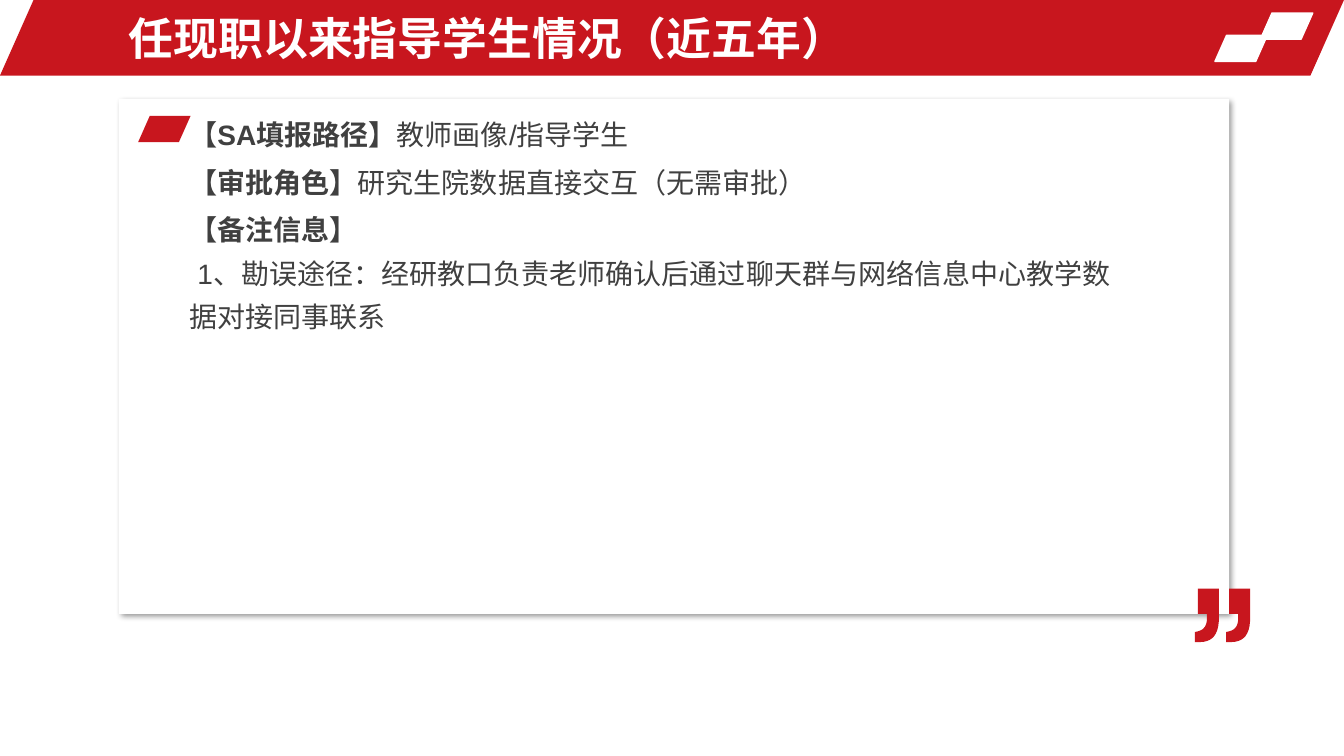
from dataclasses import dataclass

from lxml import etree
from pptx import Presentation
from pptx.dml.color import RGBColor
from pptx.enum.shapes import MSO_SHAPE
from pptx.enum.text import MSO_ANCHOR, MSO_AUTO_SIZE
from pptx.oxml.ns import qn
from pptx.shapes.autoshape import Shape
from pptx.slide import Slide
from pptx.text.text import TextFrame
from pptx.util import Inches, Pt

RED, WHITE, DARK = "C8161E", "FFFFFF", "404040"
FONT = "Arial"
SLANT = 0.444
UNITS_PER_INCH = 1000
Point = tuple[float, float]


@dataclass(frozen=True)
class Slanted:
    left: float
    top: float
    width: float = 0.52
    height: float = 0.26
    fill: str = RED
    outlined: bool = False


@dataclass(frozen=True)
class Line:
    text: str
    label: str = ""
    indent: float = 0


@dataclass(frozen=True)
class Note:
    top: float
    height: float
    lines: tuple[Line, ...]


HEADER = (
    Slanted(0, 0, 13.33, 0.75),
    Slanted(12.5, 0.13, fill=WHITE, outlined=True),
    Slanted(12.05, 0.35, fill=WHITE, outlined=True),
)
NOTES = (
    Note(1.02, 0.54, (Line("教师画像/指导学生", "【SA填报路径】"),)),
    Note(1.49, 0.54, (Line("研究生院数据直接交互（无需审批）", "【审批角色】"),)),
    Note(1.96, 1.41, (
        Line("", "【备注信息】"),
        Line("1、勘误途径：经研教口负责老师确认后通过聊天群与网络信息中心教学数据对接同事联系",
             indent=0.08),
    )),
)


def color(value: str) -> RGBColor:
    return RGBColor.from_string(value)


def paint(shape: Shape, fill: str, outlined: bool = False) -> None:
    shape.shadow.inherit = False
    shape.fill.solid()
    shape.fill.fore_color.rgb = color(fill)
    if outlined:
        shape.line.color.rgb = color(fill)
        shape.line.width = Pt(1)
    else:
        shape.line.fill.background()


def add_slanted(slide: Slide, item: Slanted) -> None:
    shape = slide.shapes.add_shape(
        MSO_SHAPE.PARALLELOGRAM, Inches(item.left), Inches(item.top),
        Inches(item.width), Inches(item.height))
    shape.adjustments[0] = SLANT
    paint(shape, item.fill, item.outlined)


def add_card(slide: Slide) -> None:
    card = slide.shapes.add_shape(
        MSO_SHAPE.ROUNDED_RECTANGLE, Inches(1.18), Inches(0.98),
        Inches(11.01), Inches(5.11))
    card.adjustments[0] = 0
    paint(card, WHITE)
    effects = card._element.spPr.find(qn("a:effectLst"))
    shadow = etree.SubElement(
        effects, qn("a:outerShdw"), blurRad=str(Pt(4)), dist=str(Pt(3)),
        dir=str(45 * 60000), algn="tl", rotWithShape="0")
    tint = etree.SubElement(shadow, qn("a:srgbClr"), val="000000")
    etree.SubElement(tint, qn("a:alpha"), val="40000")


def curve(start: Point, first: Point, second: Point, end: Point) -> list[Point]:
    """Sample a cubic Bézier curve, leaving out its start."""
    steps = 10
    points = []
    for step in range(1, steps + 1):
        t = step / steps
        u = 1 - t
        weights = (u ** 3, 3 * u * u * t, 3 * u * t * t, t ** 3)
        corners = (start, first, second, end)
        points.append((sum(w * p[0] for w, p in zip(weights, corners)),
                       sum(w * p[1] for w, p in zip(weights, corners))))
    return points


def add_closing_quote(slide: Slide) -> None:
    mark = [
        (0.24, 0), (0.24, 0.28),
        *curve((0.24, 0.28), (0.24, 0.45), (0.18, 0.53), (0.05, 0.53)),
        (0, 0.53), (0, 0.43),
        *curve((0, 0.43), (0.08, 0.42), (0.12, 0.38), (0.12, 0.3)),
        (0.12, 0.25), (0.03, 0.25), (0.03, 0),
    ]
    left, top, gap = 11.85, 5.84, 0.31
    marks = [
        [((left + index * gap + x) * UNITS_PER_INCH, (top + y) * UNITS_PER_INCH)
         for x, y in mark]
        for index in range(2)
    ]
    builder = slide.shapes.build_freeform(
        *marks[0][0], scale=Inches(1) / UNITS_PER_INCH)
    builder.add_line_segments(marks[0][1:], close=True)
    builder.move_to(*marks[1][0])
    builder.add_line_segments(marks[1][1:], close=True)
    paint(builder.convert_to_shape(), RED)


def add_text_frame(slide: Slide, left: float, top: float,
                   width: float, height: float) -> TextFrame:
    box = slide.shapes.add_textbox(
        Inches(left), Inches(top), Inches(width), Inches(height))
    box.text_frame.word_wrap = True
    return box.text_frame


def add_run(paragraph, text: str, size: int, fill: str, bold: bool) -> None:
    run = paragraph.add_run()
    run.text = text
    run.font.name = FONT
    run.font.size = Pt(size)
    run.font.bold = bold
    run.font.color.rgb = color(fill)


def add_title(slide: Slide) -> None:
    frame = add_text_frame(slide, 1.18, 0.05, 8.6, 0.65)
    frame.vertical_anchor = MSO_ANCHOR.MIDDLE
    add_run(frame.paragraphs[0], "任现职以来指导学生情况（近五年）", 32, WHITE, True)


def add_note(slide: Slide, note: Note) -> None:
    frame = add_text_frame(slide, 1.78, note.top, 9.51, note.height)
    frame.auto_size = MSO_AUTO_SIZE.SHAPE_TO_FIT_TEXT
    for index, line in enumerate(note.lines):
        paragraph = frame.add_paragraph() if index else frame.paragraphs[0]
        paragraph.line_spacing = 1.3
        if line.indent:
            paragraph._p.get_or_add_pPr().set("indent", str(Inches(line.indent)))
        if line.label:
            add_run(paragraph, line.label, 20, DARK, True)
        if line.text:
            add_run(paragraph, line.text, 20, DARK, False)


def main() -> None:
    presentation = Presentation()
    presentation.slide_width = Inches(13.33)
    presentation.slide_height = Inches(7.5)
    slide = presentation.slides.add_slide(presentation.slide_layouts[6])
    for item in HEADER:
        add_slanted(slide, item)
    add_title(slide)
    add_card(slide)
    add_closing_quote(slide)
    add_slanted(slide, Slanted(1.37, 1.15))
    for note in NOTES:
        add_note(slide, note)
    presentation.save("out.pptx")


if __name__ == "__main__":
    main()
